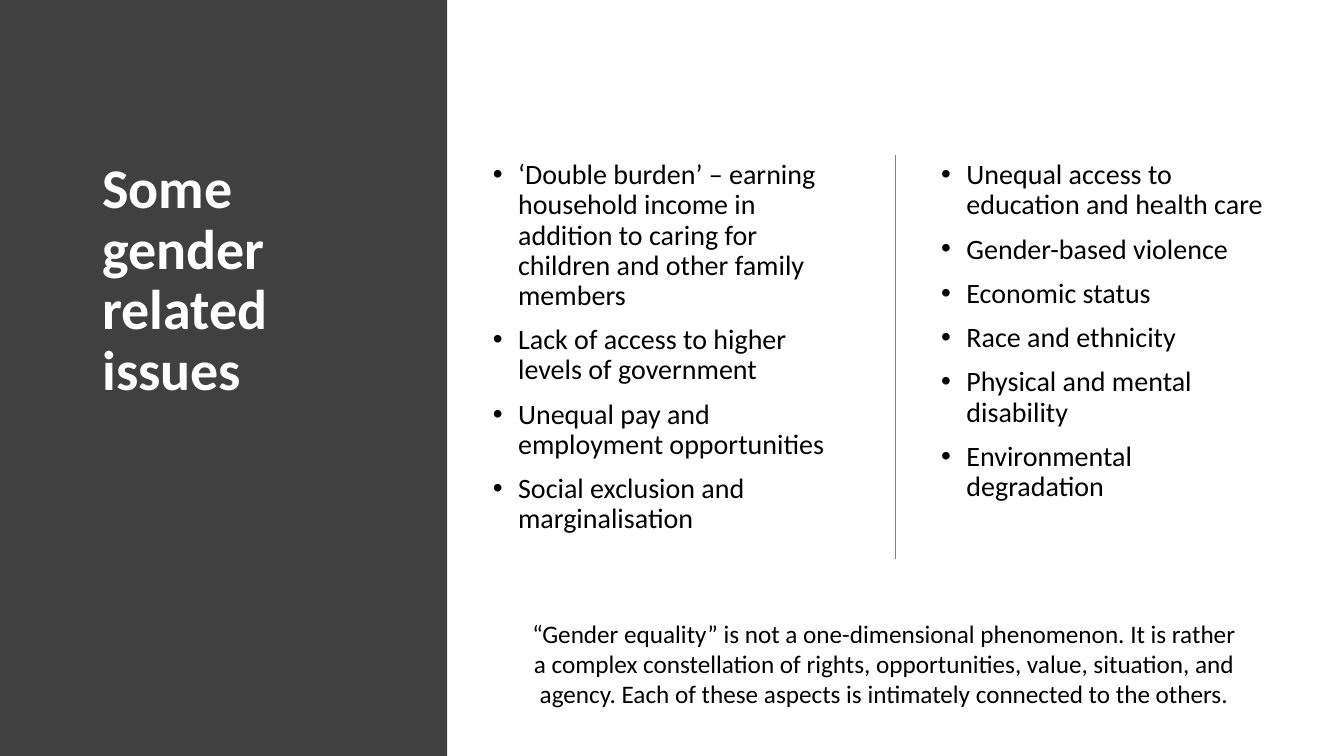
from lxml.etree import SubElement
from pptx import Presentation
from pptx.dml.color import RGBColor
from pptx.enum.shapes import MSO_CONNECTOR, MSO_SHAPE
from pptx.enum.text import PP_ALIGN
from pptx.oxml.ns import qn
from pptx.util import Pt

PX = 9525
WIDTH, HEIGHT = 1280, 720
FONT = "Calibri"
DARK = RGBColor(0x40, 0x40, 0x40)
GREY = RGBColor(0x80, 0x80, 0x80)
WHITE = RGBColor(0xFF, 0xFF, 0xFF)
BLACK = RGBColor(0, 0, 0)

TITLE = "Some gender related issues"
LEFT = [
    "‘Double burden’ – earning household income in addition to caring for children and other family members",
    "Lack of access to higher levels of government",
    "Unequal pay and employment opportunities",
    "Social exclusion and marginalisation",
]
RIGHT = [
    "Unequal access to education and health care",
    "Gender-based violence",
    "Economic status",
    "Race and ethnicity",
    "Physical and mental disability",
    "Environmental degradation",
]
QUOTE = (
    "“Gender equality” is not a one-dimensional phenomenon. It is rather "
    "a complex constellation of rights, opportunities, value, situation, and "
    "agency. Each of these aspects is intimately connected to the others."
)


def emu(*sizes):
    return [size * PX for size in sizes]


def add_bullet(para, indent=24):
    props = para._p.get_or_add_pPr()
    props.set("marL", str(indent * PX))
    props.set("indent", str(-indent * PX))
    SubElement(props, qn("a:buFont"), typeface="Arial")
    SubElement(props, qn("a:buChar"), char="•")


def add_text(slide, box, lines, size, color=BLACK, bold=False,
             align=PP_ALIGN.LEFT, spacing=1.0, before=0, bullet=False):
    frame = slide.shapes.add_textbox(*emu(*box)).text_frame
    frame.word_wrap = True
    for i, line in enumerate(lines):
        para = frame.paragraphs[0] if i == 0 else frame.add_paragraph()
        para.alignment = align
        para.line_spacing = spacing
        para.space_before = Pt(before)
        if bullet:
            add_bullet(para)
        run = para.add_run()
        run.text = line
        font = run.font
        font.name, font.size, font.bold = FONT, Pt(size), bold
        font.color.rgb = color


def add_panel(slide, x, y, w, h):
    """Dark side panel with the slide title."""
    panel = slide.shapes.add_shape(MSO_SHAPE.RECTANGLE, *emu(x, y, w, h))
    panel.shadow.inherit = False
    panel.fill.solid()
    panel.fill.fore_color.rgb = DARK
    panel.line.fill.background()
    add_text(slide, (x + 88, y + 148, 304, 458), [TITLE], 40,
             color=WHITE, bold=True, spacing=0.9)


def add_issues(slide, x, y, w, h):
    """Two bullet lists with a rule between them."""
    style = dict(size=20, spacing=0.9, before=10, bullet=True)
    add_text(slide, (x, y, 360, h), LEFT, **style)
    mid = x + 393
    rule = slide.shapes.add_connector(
        MSO_CONNECTOR.STRAIGHT, *emu(mid, y, mid, y + 384))
    rule.line.color.rgb = GREY
    rule.line.width = Pt(1)
    SubElement(rule._element.spPr, qn("a:effectLst"))
    add_text(slide, (x + w - 336, y, 336, h), RIGHT, **style)


def add_quote(slide, *box):
    add_text(slide, box, [QUOTE], 18, align=PP_ALIGN.CENTER)


def main():
    deck = Presentation()
    deck.slide_width, deck.slide_height = emu(WIDTH, HEIGHT)
    slide = deck.slides.add_slide(deck.slide_layouts[6])
    add_panel(slide, 0, 0, 426, HEIGHT)
    add_issues(slide, 460, 148, 763, 458)
    add_quote(slide, 492, 584, 700, 97)
    deck.save("out.pptx")


if __name__ == "__main__":
    main()
